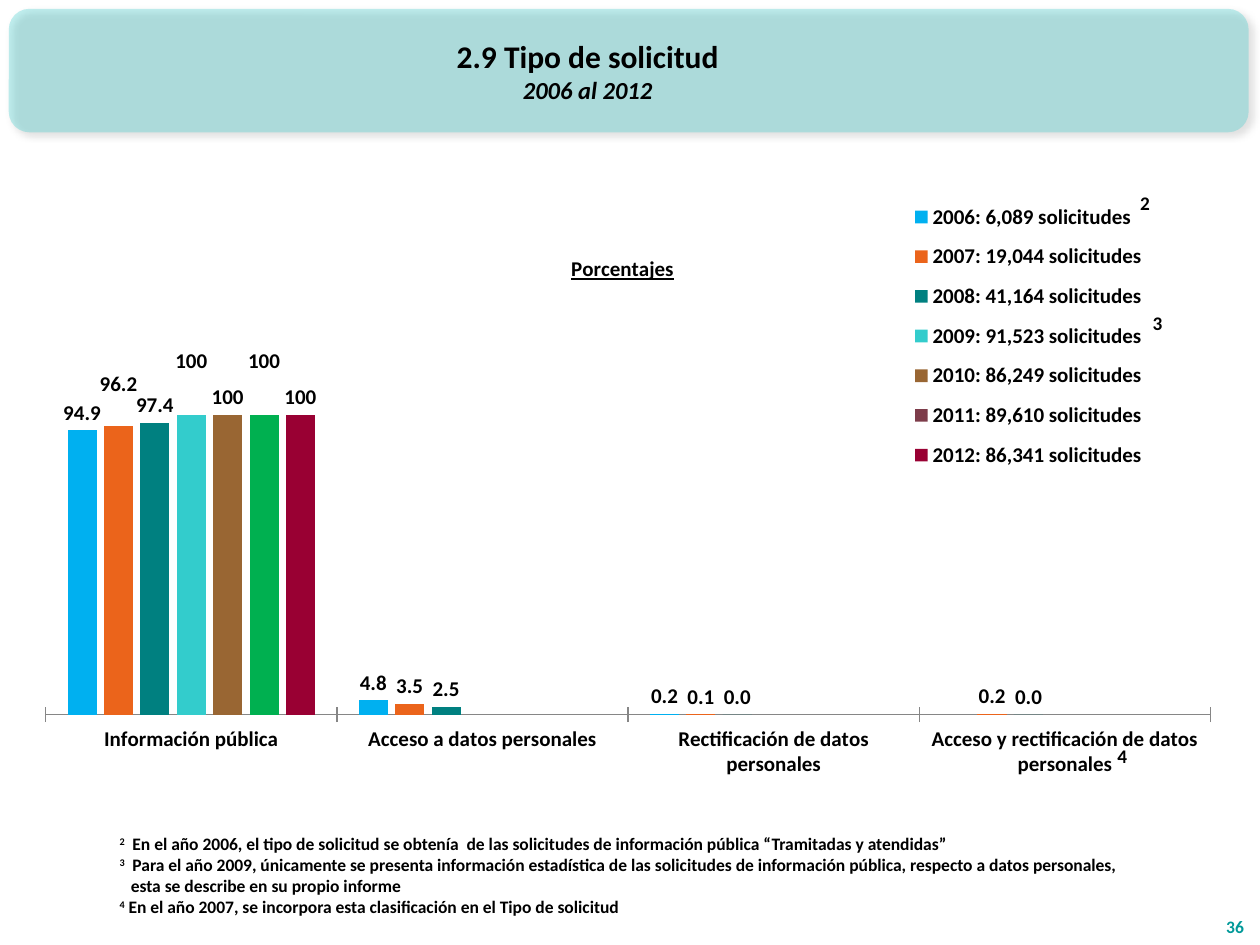
from dataclasses import dataclass

from lxml import etree
from pptx import Presentation
from pptx.chart.data import CategoryChartData
from pptx.dml.color import RGBColor
from pptx.enum.chart import (XL_CHART_TYPE, XL_LABEL_POSITION,
                             XL_LEGEND_POSITION, XL_TICK_LABEL_POSITION,
                             XL_TICK_MARK)
from pptx.enum.shapes import MSO_SHAPE
from pptx.enum.text import MSO_ANCHOR, PP_ALIGN
from pptx.oxml import parse_xml
from pptx.oxml.ns import nsdecls, qn
from pptx.util import Inches, Pt

LEFT, CENTER, RIGHT = PP_ALIGN.LEFT, PP_ALIGN.CENTER, PP_ALIGN.RIGHT
TOP, MIDDLE, BOTTOM = MSO_ANCHOR.TOP, MSO_ANCHOR.MIDDLE, MSO_ANCHOR.BOTTOM
OUTSIDE = XL_LABEL_POSITION.OUTSIDE_END
COLUMNS = XL_CHART_TYPE.COLUMN_CLUSTERED
LEGEND_TOP = XL_LEGEND_POSITION.TOP
NEXT_TO = XL_TICK_LABEL_POSITION.NEXT_TO_AXIS
CROSS = XL_TICK_MARK.CROSS
ROUNDED = MSO_SHAPE.ROUNDED_RECTANGLE


@dataclass(frozen=True)
class Theme:
    font: str = "Calibri"
    ink: str = "000000"
    axis: str = "868686"
    band: str = "33CCCC"
    page: str = "009999"
    title: float = 18
    sub: float = 14
    chart: float = 12
    mark: float = 11
    note: float = 10


THEME = Theme()

CATS = ["Información pública", "Acceso a datos personales",
        "Rectificación de datos personales",
        "Acceso y rectificación de datos personales"]

# name, values, colour, lift of the first label as a share of chart height
SERIES = [
    ("2006: 6,089 solicitudes", (94.9, 4.8, 0.2, None), "00B0F0", 0),
    ("2007: 19,044 solicitudes", (96.2, 3.5, 0.1, 0.2), "EB641B", 0.04),
    ("2008: 41,164 solicitudes", (97.4, 2.5, 0, 0), "008080", 0),
    ("2009: 91,523 solicitudes", (100, None, None, None), "33CCCC", 0.06),
    ("2010: 86,249 solicitudes", (100, None, None, None), "996633", 0),
    ("2011: 89,610 solicitudes", (100, None, None, None), "7D3C4A", 0.06),
    ("2012: 86,341 solicitudes", (100, None, None, None), "990033", 0),
]
GREEN_BAR = (5, "00B050")

NOTES = [
    ("2", "  En el año 2006, el tipo de solicitud se obtenía  de las "
          "solicitudes de información pública “Tramitadas y atendidas”"),
    ("3", "  Para el año 2009, únicamente se presenta información "
          "estadística de las solicitudes de información pública, "
          "respecto a datos personales,"),
    ("", "esta se describe en su propio informe"),
    ("4", " En el año 2007, se incorpora esta clasificación en el "
          "Tipo de solicitud"),
]

MARKS = [("2", 8.95, 1.47), ("3", 9.05, 2.42), ("4", 8.77, 5.86)]


def rgb(code):
    return RGBColor.from_string(code)


def add_run(para, text, size=THEME.note, color=THEME.ink, italic=False,
            base=0):
    run = para.add_run()
    run.text = text
    font = run.font
    font.name, font.size, font.bold = THEME.font, Pt(size), True
    font.italic = italic
    font.color.rgb = rgb(color)
    if base:
        run._r.get_or_add_rPr().set("baseline", str(base * 1000))


def add_box(slide, box, anchor=TOP):
    frame = slide.shapes.add_textbox(*map(Inches, box)).text_frame
    frame.word_wrap = True
    frame.vertical_anchor = anchor
    return frame


def add_text(slide, box, text, align=LEFT, anchor=TOP, **style):
    frame = add_box(slide, box, anchor)
    para = frame.paragraphs[0]
    para.alignment = align
    add_run(para, text, **style)
    return frame


def set_layout(parent, after, inner=False, **sizes):
    """Give a chart part a manual layout, placed after the named child."""
    for old in parent.findall(qn("c:layout")):
        parent.remove(old)
    layout = parse_xml(f"<c:layout {nsdecls('c')}><c:manualLayout/></c:layout>")
    pairs = [("layoutTarget", "inner")] if inner else []
    if after != "idx":
        pairs += [("xMode", "edge"), ("yMode", "edge")]
    for tag, val in pairs + list(sizes.items()):
        etree.SubElement(layout[0], qn(f"c:{tag}")).set("val", str(val))
    prior = parent.find(qn(f"c:{after}")) if after else None
    parent.insert(0 if prior is None else parent.index(prior) + 1, layout)


def add_banner(slide, box):
    band = slide.shapes.add_shape(ROUNDED, *map(Inches, box))
    band.fill.solid()
    band.fill.fore_color.rgb = rgb(THEME.band)
    band.line.fill.background()
    props = band._element.spPr
    tint = props.find(qn("a:solidFill"))[0]
    etree.SubElement(tint, qn("a:alpha")).set("val", "30000")
    props.append(parse_xml(
        f'<a:effectLst {nsdecls("a")}><a:outerShdw blurRad="{Pt(4)}" '
        f'dist="{Pt(3)}" dir="2700000" algn="tl" rotWithShape="0">'
        f'<a:srgbClr val="{THEME.ink}"><a:alpha val="40000"/></a:srgbClr>'
        '</a:outerShdw></a:effectLst>'))
    left, top, width, height = box
    frame = add_text(slide, (left + 0.01, top + 0.02, width - 0.67,
                             height - 0.04), "2.9 Tipo de solicitud",
                     align=CENTER, anchor=MIDDLE, size=THEME.title)
    sub = frame.add_paragraph()
    sub.alignment = CENTER
    add_run(sub, "2006 al 2012", size=THEME.sub, italic=True)


def style_series(plot):
    for series, (_, _, color, lift) in zip(plot.series, SERIES):
        series.format.fill.solid()
        series.format.fill.fore_color.rgb = rgb(color)
        series.invert_if_negative = False
        labels = series.data_labels
        labels.show_value = True
        labels.position = OUTSIDE
        labels.number_format = "0.0" if series.values[1] else "General"
        labels.number_format_is_linked = False
        for lead in labels._element.findall(qn("c:showLeaderLines")):
            lead.set("val", "0")
        if lift:
            series.points[0].data_label.position = OUTSIDE
            label = labels._element.find(qn("c:dLbl"))
            set_layout(label, "idx", x=0, y=-lift)
    spot, color = GREEN_BAR
    fill = plot.series[spot].points[0].format.fill
    fill.solid()
    fill.fore_color.rgb = rgb(color)


def add_bars(slide, box):
    data = CategoryChartData()
    data.categories = CATS
    for name, vals, *_ in SERIES:
        data.add_series(name, vals)
    chart = slide.shapes.add_chart(COLUMNS, *map(Inches, box), data).chart
    font = chart.font
    font.name, font.size, font.bold = THEME.font, Pt(THEME.chart), True
    font.color.rgb = rgb(THEME.ink)

    title = chart.chart_title
    para = title.text_frame.paragraphs[0]
    add_run(para, "Porcentajes", size=THEME.chart)
    para.runs[0].font.underline = True
    title._element.find(qn("c:overlay")).set("val", "1")
    set_layout(title._element, "tx", x=0.45, y=0.12)

    chart.has_legend = True
    legend = chart.legend
    legend.position = LEGEND_TOP
    legend.include_in_layout = False
    set_layout(legend._element, "legendPos", x=0.72, y=0.02, w=0.22, h=0.48)

    # The room below zero holds the category labels inside the plot.
    values = chart.value_axis
    values.minimum_scale, values.maximum_scale = -10, 110
    values.has_major_gridlines = False
    values.visible = False
    cats = chart.category_axis
    cats.major_tick_mark = CROSS
    cats.tick_label_position = NEXT_TO
    cats.format.line.color.rgb = rgb(THEME.axis)

    plot = chart.plots[0]
    plot.gap_width, plot.overlap = 150, -25
    plot.vary_by_categories = False
    style_series(plot)
    set_layout(plot._element.getparent(), None, inner=True,
               x=0.02, y=0.34, w=0.96, h=0.59)


def add_notes(slide, box):
    frame = add_box(slide, box, MIDDLE)
    for i, (mark, text) in enumerate(NOTES):
        para = frame.add_paragraph() if i else frame.paragraphs[0]
        if mark:
            add_run(para, mark, base=30)
        else:
            para._p.get_or_add_pPr().set("marL", str(Inches(0.09)))
        add_run(para, text)


def main():
    deck = Presentation()
    deck.slide_width, deck.slide_height = Inches(10), Inches(7.5)
    slide = deck.slides.add_slide(deck.slide_layouts[6])
    add_banner(slide, (0.07, 0.07, 9.84, 0.98))
    add_bars(slide, (0.17, 1.41, 9.63, 4.84))
    add_notes(slide, (0.85, 6.56, 8.28, 0.77))
    for mark, left, top in MARKS:
        add_text(slide, (left, top, 0.47, 0.29), mark, size=THEME.mark)
    add_text(slide, (9.57, 7.09, 0.4, 0.4), "36", align=RIGHT,
             anchor=BOTTOM, color=THEME.page)
    deck.save("out.pptx")


if __name__ == "__main__":
    main()
